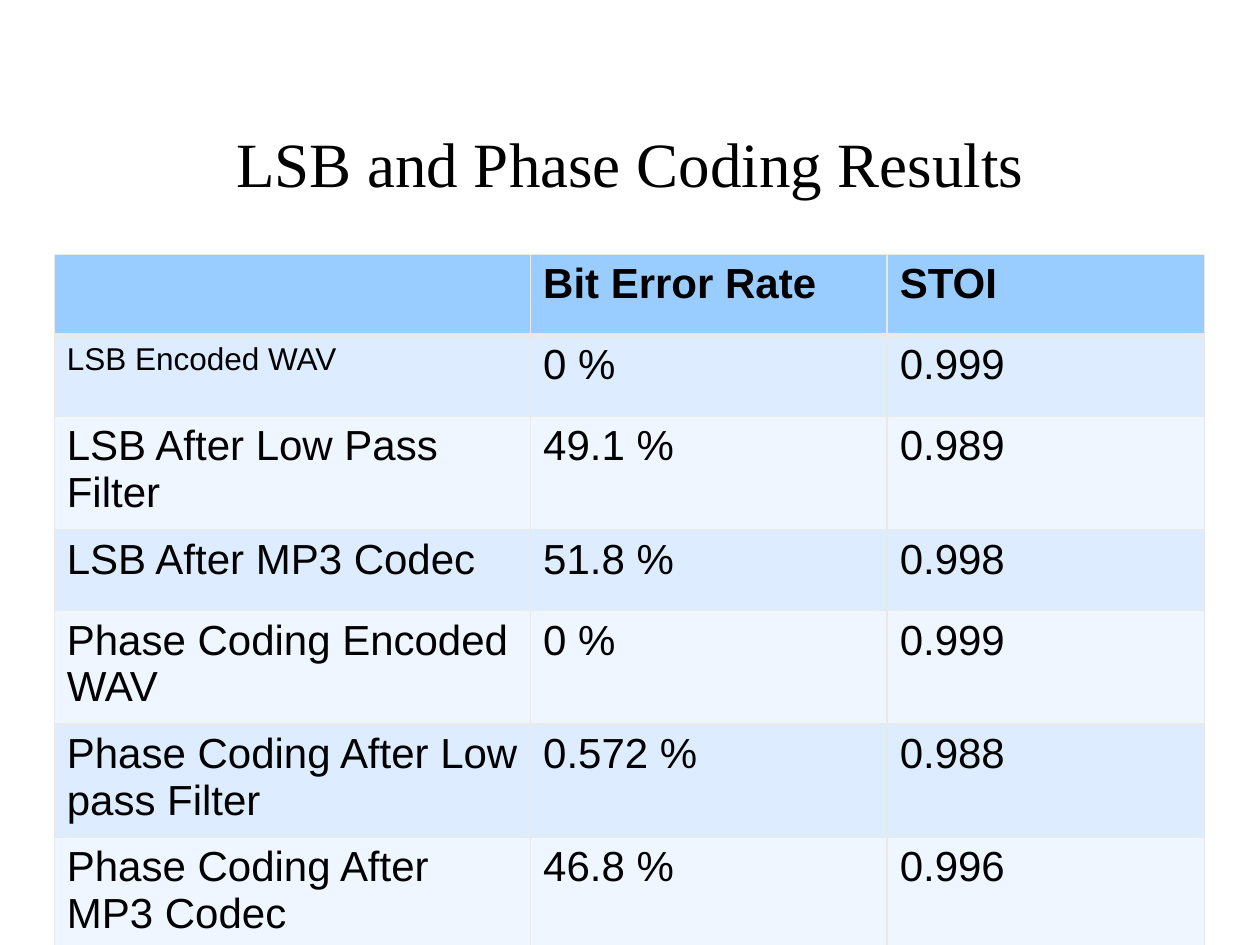
from lxml import etree
from pptx import Presentation
from pptx import util as u
from pptx.dml.color import RGBColor
from pptx.enum import text
from pptx.oxml.ns import qn

COLORS = {
    "ink": "000000",
    "header": "99CCFF",
    "odd": "DEECFF",
    "even": "EFF6FF",
    "border": "E8EAE9",
}

RESULTS = [
    ["", "Bit Error Rate", "STOI"],
    ["LSB Encoded WAV", "0 %", "0.999"],
    ["LSB After Low Pass Filter", "49.1 %", "0.989"],
    ["LSB After MP3 Codec", "51.8 %", "0.998"],
    ["Phase Coding Encoded WAV", "0 %", "0.999"],
    ["Phase Coding After Low pass Filter", "0.572 %", "0.988"],
    ["Phase Coding After MP3 Codec", "46.8 %", "0.996"],
]


class Deck:
    """Holds the style and the current slide."""

    title_style = {"name": "Times New Roman", "size": u.Pt(36), "bold": False}
    cell_style = {"name": "Arial", "size": u.Pt(24), "bold": False}

    def __init__(self, prs):
        self.s = prs.slides.add_slide(prs.slide_layouts[6])

    def add_text(self, tf, content, style):
        p = tf.paragraphs[0]
        r = p.add_run()
        r.text = content
        for key, value in style.items():
            setattr(r.font, key, value)
        r.font.color.rgb = RGBColor.from_string(COLORS["ink"])
        return p

    def title(self, content, x, y, w, h):
        tf = self.s.shapes.add_textbox(u.Pt(x), u.Pt(y), u.Pt(w), u.Pt(h)).text_frame
        tf.word_wrap = True
        tf.vertical_anchor = text.MSO_ANCHOR.MIDDLE
        p = self.add_text(tf, content, self.title_style)
        p.alignment = text.PP_ALIGN.CENTER

    def borders(self, cell, bottom):
        tcPr = cell._tc.get_or_add_tcPr()
        for side, width in (("L", 1), ("R", 1), ("T", 1), ("B", bottom)):
            ln = etree.SubElement(tcPr, qn("a:ln" + side), w=str(u.Pt(width)))
            fill = etree.SubElement(ln, qn("a:solidFill"))
            etree.SubElement(fill, qn("a:srgbClr"), val=COLORS["border"])

    def table(self, rows, x, y, widths, row_height, overrides):
        table = self.s.shapes.add_table(
            len(rows), len(widths), u.Pt(x), u.Pt(y),
            u.Pt(sum(widths)), u.Pt(row_height * len(rows))).table
        for column, width in zip(table.columns, widths):
            column.width = u.Pt(width)
        for i, row in enumerate(rows):
            table.rows[i].height = u.Pt(row_height)
            band = "header" if i == 0 else "odd" if i % 2 else "even"
            for j, content in enumerate(row):
                cell = table.cell(i, j)
                # Borders come before the fill in the cell properties
                self.borders(cell, bottom=3 if i == 0 else 1)
                cell.fill.solid()
                cell.fill.fore_color.rgb = RGBColor.from_string(COLORS[band])
                if content:
                    style = {**self.cell_style, "bold": i == 0,
                             **overrides.get((i, j), {})}
                    self.add_text(cell.text_frame, content, style)


def main():
    prs = Presentation()
    prs.slide_width, prs.slide_height = u.Pt(720), u.Pt(540)
    deck = Deck(prs)

    # Title
    deck.title("LSB and Phase Coding Results", 54, 48, 612, 90)

    # Results table, with a smaller first row label
    deck.table(RESULTS, 31, 145.3, [272.2, 203.8, 181.4], 46.29,
               {(1, 0): {"size": u.Pt(18)}})

    prs.save("out.pptx")


if __name__ == "__main__":
    main()
